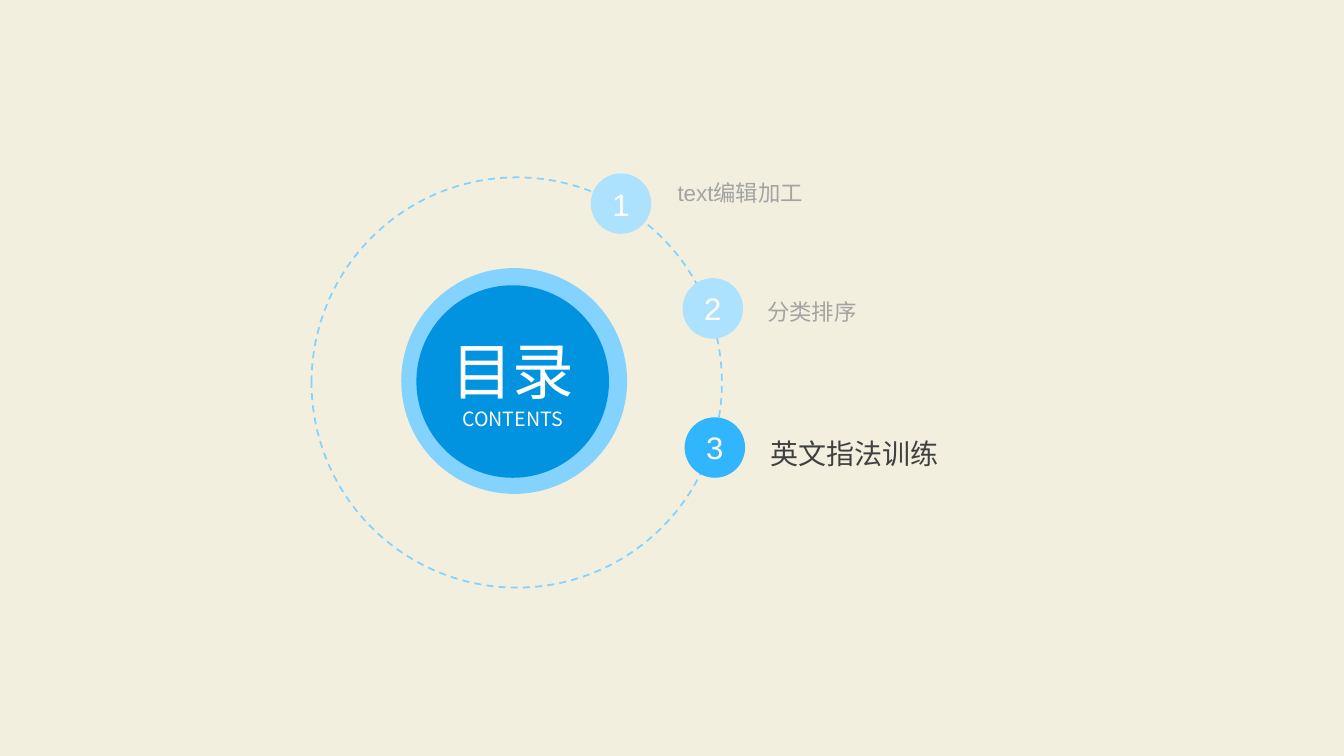
from dataclasses import dataclass

from lxml.etree import SubElement
from pptx import Presentation
from pptx.dml.color import RGBColor
from pptx.enum.dml import MSO_LINE_DASH_STYLE as Dash
from pptx.enum.shapes import MSO_SHAPE as Preset
from pptx.enum.text import MSO_ANCHOR as Anchor, PP_ALIGN as Align
from pptx.oxml.ns import qn
from pptx.shapes.autoshape import Shape
from pptx.slide import Slide
from pptx.text.text import TextFrame
from pptx.util import Inches, Pt

CJK_FONT = "Noto Sans CJK SC"
LATIN_FONT = "Arial"
SKY = "83D3FE"
WHITE = "FFFFFF"
BADGE_SIZE = 0.6


@dataclass(frozen=True)
class Line:
    text: str
    size: float
    color: str
    font: str = LATIN_FONT


@dataclass(frozen=True)
class Chapter:
    badge_left: float
    badge_top: float
    badge_fill: str
    title_left: float
    title_top: float
    title_width: float
    title: Line


CHAPTERS = [
    Chapter(5.86, 1.72, "ADE2FE", 6.68, 1.46, 3.91, Line("text编辑加工", 16, "A3A3A3")),
    Chapter(6.77, 2.76, "ADE2FE", 7.57, 2.64, 3.26, Line("分类排序", 16, "A3A3A3")),
    Chapter(6.79, 4.14, "31B6FD", 7.6, 4.04, 3.3, Line("英文指法训练", 20, "404040")),
]


def rgb(color: str) -> RGBColor:
    return RGBColor.from_string(color)


def write_lines(frame: TextFrame, lines: list[Line], align: Align,
                inset: float = 0, spacing: float = 1.0) -> None:
    frame.word_wrap = True
    frame.vertical_anchor = Anchor.MIDDLE
    frame.margin_left = Inches(inset)
    frame.margin_top = frame.margin_right = frame.margin_bottom = 0
    for index, line in enumerate(lines):
        paragraph = frame.add_paragraph() if index else frame.paragraphs[0]
        paragraph.text = line.text
        paragraph.alignment = align
        paragraph.line_spacing = spacing
        font = paragraph.font
        font.size = Pt(line.size)
        font.name = line.font
        font.color.rgb = rgb(line.color)
        defaults = paragraph._p.pPr.find(qn("a:defRPr"))
        SubElement(defaults, qn("a:ea")).set("typeface", CJK_FONT)


def add_circle(slide: Slide, left: float, top: float, size: float,
               fill: str | None = None) -> Shape:
    circle = slide.shapes.add_shape(
        Preset.OVAL, Inches(left), Inches(top), Inches(size), Inches(size))
    circle.shadow.inherit = False
    circle.line.fill.background()
    if fill:
        circle.fill.solid()
        circle.fill.fore_color.rgb = rgb(fill)
    else:
        circle.fill.background()
    return circle


def add_hub(slide: Slide) -> None:
    add_circle(slide, 3.98, 2.66, 2.24, SKY)
    orbit = add_circle(slide, 3.09, 1.76, 4.07)
    orbit.line.color.rgb = rgb(SKY)
    orbit.line.width = Pt(1.25)
    orbit.line.dash_style = Dash.DASH
    hub = add_circle(slide, 4.13, 2.83, 1.91, "0293E0")
    heading = [Line("目录", 44, WHITE, CJK_FONT), Line("CONTENTS", 14, WHITE, CJK_FONT)]
    write_lines(hub.text_frame, heading, Align.CENTER)


def add_chapter(slide: Slide, number: int, chapter: Chapter) -> None:
    title = slide.shapes.add_textbox(
        Inches(chapter.title_left), Inches(chapter.title_top),
        Inches(chapter.title_width), Inches(0.84))
    write_lines(title.text_frame, [chapter.title], Align.LEFT, inset=0.04, spacing=1.2)
    badge = add_circle(
        slide, chapter.badge_left, chapter.badge_top, BADGE_SIZE, chapter.badge_fill)
    write_lines(badge.text_frame, [Line(str(number), 22.2, WHITE)], Align.CENTER)


def main() -> None:
    deck = Presentation()
    deck.slide_width = Inches(13.33)
    deck.slide_height = Inches(7.5)
    slide = deck.slides.add_slide(deck.slide_layouts[6])
    slide.background.fill.solid()
    slide.background.fill.fore_color.rgb = rgb("F2EFDE")
    add_hub(slide)
    for number, chapter in enumerate(CHAPTERS, start=1):
        add_chapter(slide, number, chapter)
    deck.save("out.pptx")


if __name__ == "__main__":
    main()
